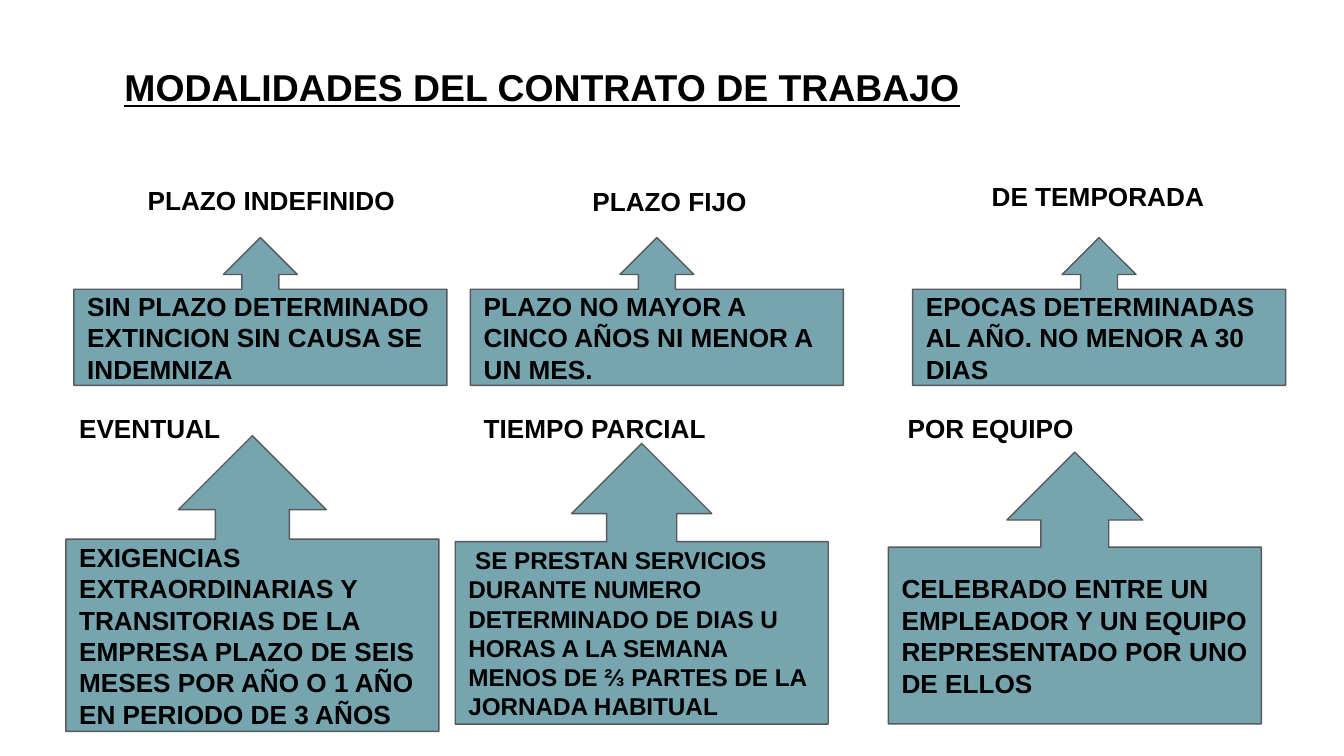
from dataclasses import dataclass

from pptx import Presentation
from pptx import util as u
from pptx.dml.color import RGBColor
from pptx.enum import shapes, text

# Square grid: 100 columns across the 16:9 slide, 56.25 rows down
COLUMNS, ROWS = 100, 56.25
CELL = u.Inches(10) / COLUMNS
CALLOUT_WIDTH = 27.75
UPPER_TOP, UPPER_HEIGHT = 17.68, 11
LOWER_LABEL_TOP = 29.7
BLACK, TEAL, GREY = "000000", "76A5AF", "595959"


@dataclass(frozen=True)
class Box:
    column: float
    row: float
    width: float
    height: float

    def lengths(self) -> list[int]:
        return [round(n * CELL) for n in (self.column, self.row, self.width, self.height)]


@dataclass(frozen=True)
class Modality:
    name: str
    label: Box
    callout: Box
    lines: tuple[str, ...]
    size: float = 14
    indent: float = 0


MODALITIES = [
    # Upper row
    Modality("PLAZO INDEFINIDO", Box(10, 12.75, 20.9, 5.5),
             Box(5.5, UPPER_TOP, CALLOUT_WIDTH, UPPER_HEIGHT),
             ("SIN PLAZO DETERMINADO", "EXTINCION SIN CAUSA SE INDEMNIZA")),
    Modality("PLAZO FIJO", Box(43.1, 12.8, 15, 7.5),
             Box(35, UPPER_TOP, CALLOUT_WIDTH, UPPER_HEIGHT),
             ("PLAZO NO MAYOR A CINCO AÑOS NI MENOR A UN MES.",)),
    Modality("DE TEMPORADA", Box(72.8, 12.45, 17.9, 5.2),
             Box(67.9, UPPER_TOP, CALLOUT_WIDTH, UPPER_HEIGHT),
             ("EPOCAS DETERMINADAS AL AÑO. NO MENOR A 30 DIAS",)),
    # Lower row
    Modality("EVENTUAL", Box(4.9, LOWER_LABEL_TOP, 12.5, 4.8),
             Box(4.9, 32.42, CALLOUT_WIDTH, 22),
             ("EXIGENCIAS EXTRAORDINARIAS Y TRANSITORIAS DE LA EMPRESA "
              "PLAZO DE SEIS MESES POR AÑO O 1 AÑO EN PERIODO DE 3 AÑOS",)),
    Modality("TIEMPO PARCIAL", Box(35, LOWER_LABEL_TOP, 20.9, 4.8),
             Box(33.87, 33, CALLOUT_WIDTH, 20.88),
             ("SE PRESTAN SERVICIOS DURANTE NUMERO DETERMINADO DE DIAS U HORAS "
              "A LA SEMANA MENOS DE ⅔ PARTES DE LA JORNADA HABITUAL",),
             size=13, indent=0.5),
    Modality("POR EQUIPO", Box(66.55, LOWER_LABEL_TOP, 27.8, 7.5),
             Box(66.1, 33.64, CALLOUT_WIDTH, 20.22),
             ("CELEBRADO ENTRE UN EMPLEADOR Y UN EQUIPO REPRESENTADO POR UNO DE ELLOS",)),
]


def colour(value: str) -> RGBColor:
    return RGBColor.from_string(value)


def write(shape, *lines: str, size: float = 14, underline: bool = False,
          anchor=text.MSO_ANCHOR.TOP, indent: float = 0) -> None:
    frame = shape.text_frame
    frame.word_wrap = True
    frame.vertical_anchor = anchor
    frame.margin_left = frame.margin_right = round(CELL)
    frame.margin_top = frame.margin_bottom = round(CELL)
    for index, line in enumerate(lines):
        paragraph = frame.paragraphs[0] if index == 0 else frame.add_paragraph()
        paragraph.alignment = text.PP_ALIGN.LEFT
        if indent:
            paragraph._p.get_or_add_pPr().set("indent", str(round(indent * CELL)))
        run = paragraph.add_run()
        run.text = line
        run.font.name = "Arial"
        run.font.size = u.Pt(size)
        run.font.bold = True
        run.font.underline = underline
        run.font.color.rgb = colour(BLACK)


def add_text(slide, box: Box, line: str, **text_format) -> None:
    write(slide.shapes.add_textbox(*box.lengths()), line, **text_format)


def add_callout(slide, modality: Modality) -> None:
    shape = slide.shapes.add_shape(
        shapes.MSO_SHAPE.UP_ARROW_CALLOUT, *modality.callout.lengths())
    for index, share in enumerate((0.25, 0.25, 0.25, 0.65)):
        shape.adjustments[index] = share
    shape.shadow.inherit = False
    shape.fill.solid()
    shape.fill.fore_color.rgb = colour(TEAL)
    shape.line.color.rgb = colour(GREY)
    shape.line.width = u.Pt(0.75)
    write(shape, *modality.lines, size=modality.size,
          anchor=text.MSO_ANCHOR.MIDDLE, indent=modality.indent)


def main() -> None:
    presentation = Presentation()
    presentation.slide_width = round(COLUMNS * CELL)
    presentation.slide_height = round(ROWS * CELL)
    slide = presentation.slides.add_slide(presentation.slide_layouts[6])

    # Title
    add_text(slide, Box(8.28, 3.8, 70, 8.2), "MODALIDADES DEL CONTRATO DE TRABAJO",
             size=20, underline=True)

    # Contract types, each with its description
    for modality in MODALITIES:
        add_text(slide, modality.label, modality.name)
        add_callout(slide, modality)

    presentation.save("out.pptx")


if __name__ == "__main__":
    main()
